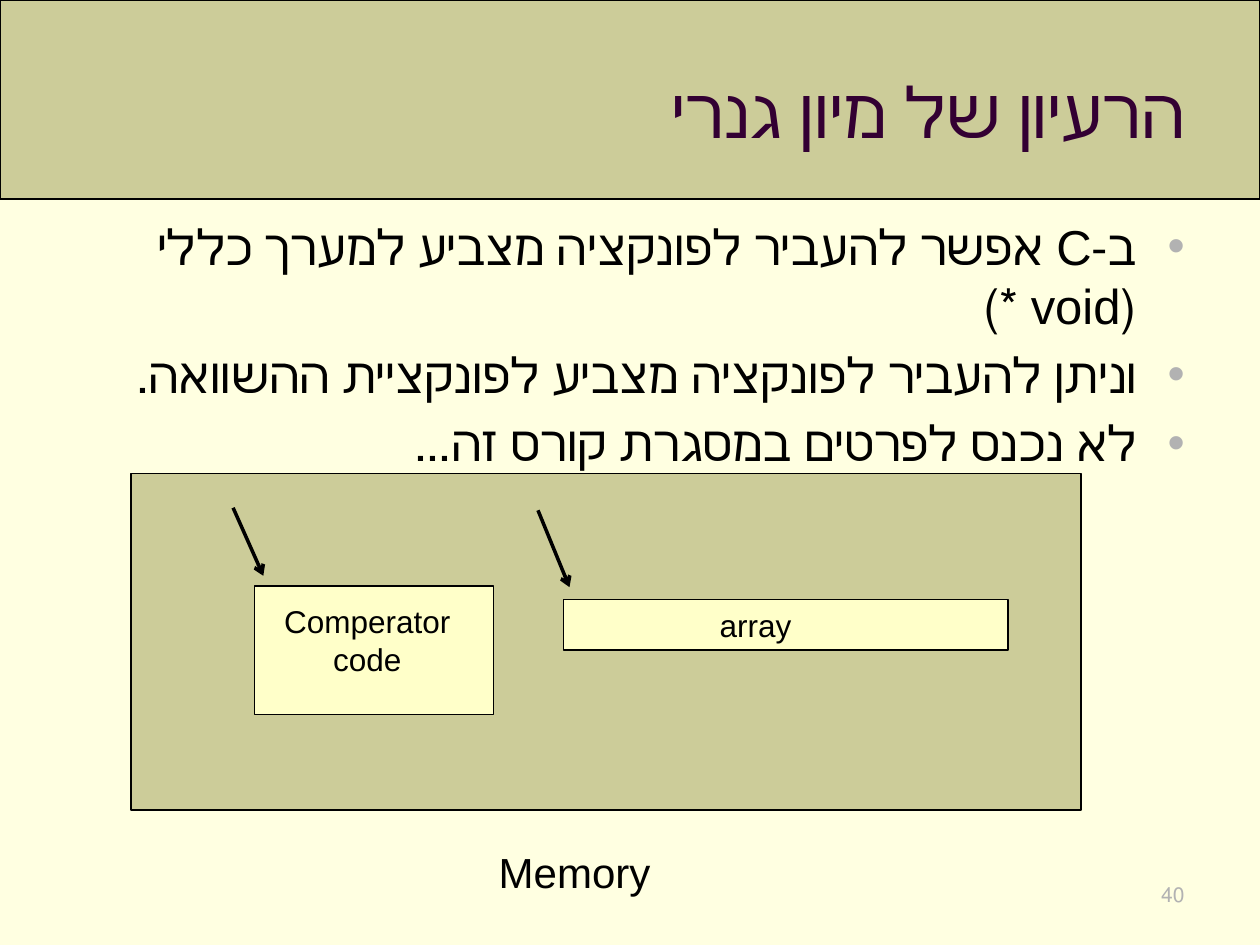
from lxml.etree import SubElement
from pptx import Presentation
from pptx.dml.color import RGBColor
from pptx.enum.shapes import MSO_CONNECTOR, MSO_SHAPE
from pptx.enum.text import MSO_ANCHOR, PP_ALIGN
from pptx.oxml.ns import qn
from pptx.util import Inches, Pt

BLACK, GRAY, PURPLE = "000000", "B2B2B2", "330033"
CREAM, OLIVE, YELLOW = "FFFFE1", "CCCC99", "FFFFC9"


def paint(color_format, color):
    color_format.rgb = RGBColor.from_string(color)


def add_box(slide, left, top, width, height, color):
    box = slide.shapes.add_shape(
        MSO_SHAPE.RECTANGLE, Inches(left), Inches(top), Inches(width), Inches(height))
    box.shadow.inherit = False
    box.fill.solid()
    paint(box.fill.fore_color, color)
    paint(box.line.color, BLACK)
    box.line.width = Pt(0.75)


def add_text(slide, left, top, width, height, text, size, color=BLACK,
             align=PP_ALIGN.CENTER, font="Arial", anchor=MSO_ANCHOR.TOP):
    label = slide.shapes.add_textbox(
        Inches(left), Inches(top), Inches(width), Inches(height))
    frame = label.text_frame
    frame.word_wrap = True
    frame.vertical_anchor = anchor
    frame.text = text
    for paragraph in frame.paragraphs:
        paragraph.alignment = align
        paragraph._p.get_or_add_pPr().set("rtl", "1")
        for run in paragraph.runs:
            run.font.size = Pt(size)
            run.font.name = font
            paint(run.font.color, color)
    return frame


def add_bullets(frame, color, indent, gap):
    for paragraph in frame.paragraphs:
        paragraph.space_before = Pt(gap)
        properties = paragraph._p.get_or_add_pPr()
        properties.set("marL", str(Inches(indent)))
        properties.set("indent", str(-Inches(indent)))
        bullet_color = SubElement(properties, qn("a:buClr"))
        SubElement(bullet_color, qn("a:srgbClr"), val=color)
        SubElement(properties, qn("a:buFont"), typeface="Arial")
        SubElement(properties, qn("a:buChar"), char="•")


def add_arrow(slide, x1, y1, x2, y2):
    arrow = slide.shapes.add_connector(
        MSO_CONNECTOR.STRAIGHT, Inches(x1), Inches(y1), Inches(x2), Inches(y2))
    paint(arrow.line.color, BLACK)
    arrow.line.width = Pt(2)
    SubElement(arrow.line._get_or_add_ln(), qn("a:tailEnd"), type="arrow")
    SubElement(arrow._element.spPr, qn("a:effectLst"))


def main():
    presentation = Presentation()
    presentation.slide_width = Inches(10)
    presentation.slide_height = Inches(7.5)
    slide = presentation.slides.add_slide(presentation.slide_layouts[6])
    slide.background.fill.solid()
    paint(slide.background.fill.fore_color, CREAM)

    add_box(slide, 0, 0, 10, 1.58, OLIVE)
    points = [
        "ב-C אפשר להעביר לפונקציה מצביע למערך כללי (void *)",
        "וניתן להעביר לפונקציה מצביע לפונקציית ההשוואה.",
        "לא נכנס לפרטים במסגרת קורס זה...",
    ]
    body = add_text(slide, 0.28, 1.67, 9.22, 5.33, "\n".join(points), 28,
                    align=PP_ALIGN.RIGHT)
    add_bullets(body, GRAY, indent=0.38, gap=5.6)
    add_text(slide, 0.5, 0.25, 9, 1.25, "הרעיון של מיון גנרי", 40, PURPLE,
             PP_ALIGN.RIGHT, "Times New Roman", MSO_ANCHOR.MIDDLE)
    add_text(slide, 7.17, 6.95, 2.33, 0.4, "40", 12, GRAY, PP_ALIGN.RIGHT)

    add_box(slide, 1.04, 3.76, 7.54, 2.67, OLIVE)
    add_text(slide, 3.65, 6.67, 1.82, 0.5, "Memory", 24)
    add_box(slide, 2.02, 4.65, 1.9, 1.02, YELLOW)
    add_text(slide, 2.09, 4.73, 1.65, 0.71, "Comperator\ncode", 18)
    add_box(slide, 4.47, 4.76, 3.53, 0.4, YELLOW)
    add_text(slide, 5.17, 4.76, 1.65, 0.71, "array", 18)
    add_arrow(slide, 4.27, 4.05, 4.52, 4.66)
    add_arrow(slide, 1.85, 4.03, 2.09, 4.57)

    presentation.save("out.pptx")


if __name__ == "__main__":
    main()
